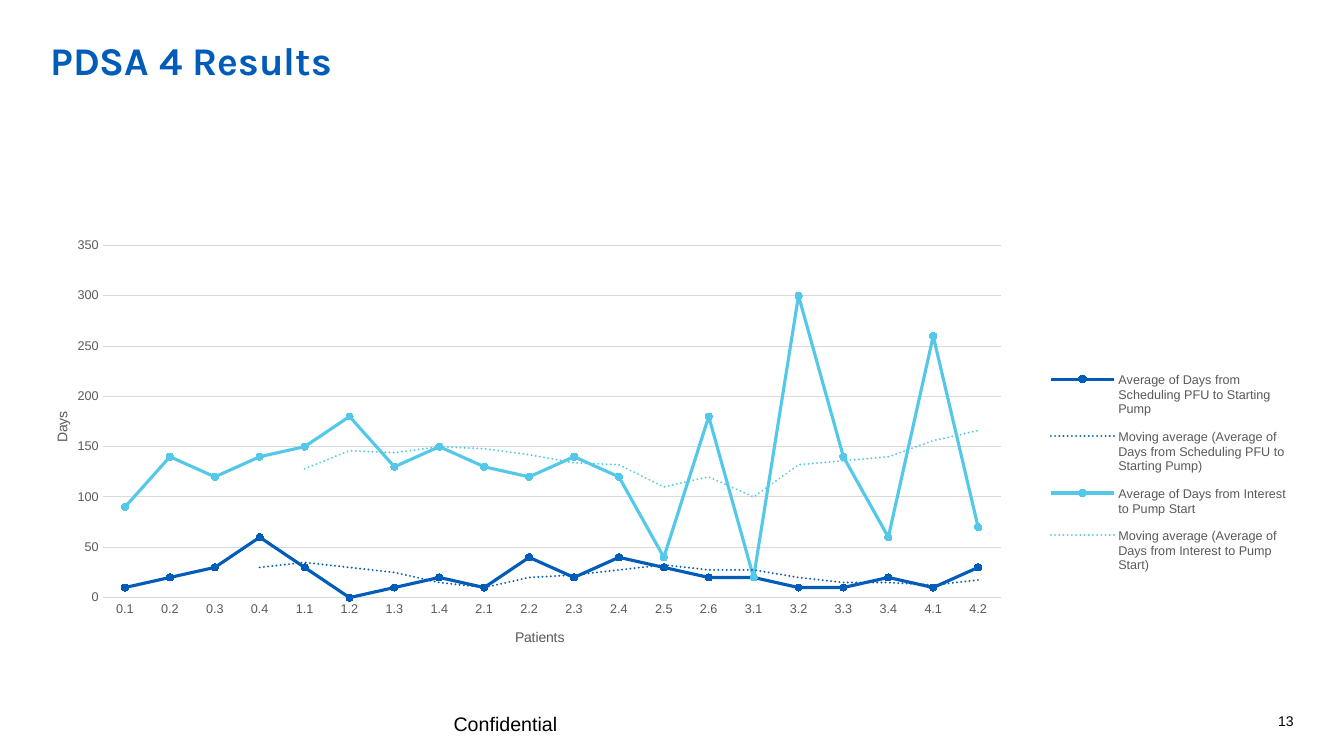
import pptx
import pptx.util
import pptx.dml.color
import pptx.chart.data
import pptx.enum.chart
import pptx.enum.text
import pptx.oxml
import pptx.oxml.ns

Inches, Pt = pptx.util.Inches, pptx.util.Pt
qn = pptx.oxml.ns.qn
NAVY, SKY, GREY, RULE = "005CB9", "54C8E8", "595959", "D9D9D9"
PATIENTS = ["0.1", "0.2", "0.3", "0.4", "1.1", "1.2", "1.3", "1.4", "2.1", "2.2",
            "2.3", "2.4", "2.5", "2.6", "3.1", "3.2", "3.3", "3.4", "4.1", "4.2"]
# Name, colour, moving-average period, days per patient
MEASURES = [
    ("Average of Days from Scheduling PFU to Starting Pump", NAVY, 4,
     [10, 20, 30, 60, 30, 0, 10, 20, 10, 40, 20, 40, 30, 20, 20, 10, 10, 20, 10, 30]),
    ("Average of Days from Interest to Pump Start", SKY, 5,
     [90, 140, 120, 140, 150, 180, 130, 150, 130, 120, 140, 120, 40, 180, 20, 300,
      140, 60, 260, 70]),
]


def style(font, size, color, name="Arial", bold=False):
    font.size, font.name, font.bold = Pt(size), name, bold
    font.color.rgb = pptx.dml.color.RGBColor.from_string(color)


def layout_xml(left, top, size="", inner=""):
    return pptx.oxml.parse_xml(
        '<c:layout xmlns:c="http://schemas.openxmlformats.org/drawingml/2006/chart">'
        f'<c:manualLayout>{inner}<c:xMode val="edge"/><c:yMode val="edge"/>'
        f'<c:x val="{left}"/><c:y val="{top}"/>{size}</c:manualLayout></c:layout>')


deck = pptx.Presentation()
deck.slide_width, deck.slide_height = Inches(13.33), Inches(7.5)
page = deck.slides.add_slide(deck.slide_layouts[5])

# Title, footer and page number
title = page.shapes.title
title.left, title.top, title.width, title.height = map(Inches, (0.5, 0.36, 8.12, 1.01))
footer = page.shapes.add_textbox(*map(Inches, (4.4, 7.01, 4.22, 0.23)))
number = page.shapes.add_textbox(*map(Inches, (12.34, 7.08, 0.49, 0.16)))
align, anchor = pptx.enum.text.PP_ALIGN, pptx.enum.text.MSO_ANCHOR
for box, words, size, color, name, side, hold in [
        (title, "PDSA 4 Results", 28, NAVY, "Karla", align.LEFT, anchor.TOP),
        (footer, "Confidential", 14, "000000", "Arial", align.LEFT, anchor.TOP),
        (number, "13", 10, "000000", "Arial", align.RIGHT, anchor.BOTTOM)]:
    frame = box.text_frame
    frame.word_wrap, frame.vertical_anchor = True, hold
    frame.auto_size = pptx.enum.text.MSO_AUTO_SIZE.NONE
    if box is not footer:
        frame.margin_left = frame.margin_right = frame.margin_top = frame.margin_bottom = 0
    para = frame.paragraphs[0]
    para.alignment = side
    span = para.add_run()
    span.text = words
    style(span.font, size, color, name, box is title)

# Line chart
data = pptx.chart.data.CategoryChartData()
data.categories = PATIENTS
for name, color, period, days in MEASURES:
    data.add_series(name, days)
chart = page.shapes.add_chart(pptx.enum.chart.XL_CHART_TYPE.LINE_MARKERS,
                              *map(Inches, (0.5, 2.06, 12.32, 4.58)), data).chart
chart.has_title = False
style(chart.font, 10, "000000")
plot = chart.plots[0]
plot.vary_by_categories = False
plot_area = chart._chartSpace.chart.plotArea
for old in plot_area.findall(qn("c:layout")):
    plot_area.remove(old)
plot_area.insert(0, layout_xml(0.042, 0.082, '<c:w val="0.723"/><c:h val="0.763"/>',
                               '<c:layoutTarget val="inner"/>'))

# Series with their moving averages
for line, (name, color, period, days) in zip(plot.series, MEASURES):
    fill = pptx.dml.color.RGBColor.from_string(color)
    line.smooth = False
    line.format.line.width = Pt(2.25)
    line.format.line.color.rgb = fill
    marker = line.marker
    marker.style, marker.size = pptx.enum.chart.XL_MARKER_STYLE.CIRCLE, 5
    marker.format.fill.solid()
    marker.format.fill.fore_color.rgb = fill
    marker.format.line.color.rgb = fill
    line._element.find(qn("c:cat")).addprevious(pptx.oxml.parse_xml(
        '<c:trendline xmlns:c="http://schemas.openxmlformats.org/drawingml/2006/chart" '
        'xmlns:a="http://schemas.openxmlformats.org/drawingml/2006/main">'
        f'<c:spPr><a:ln w="{Pt(1.5)}" cap="rnd"><a:solidFill><a:srgbClr val="{color}"/>'
        '</a:solidFill><a:prstDash val="sysDot"/></a:ln></c:spPr>'
        f'<c:trendlineType val="movingAvg"/><c:period val="{period}"/>'
        '<c:dispRSqr val="0"/><c:dispEq val="0"/></c:trendline>'))

# Axes
rule = pptx.dml.color.RGBColor.from_string(RULE)
days_axis, patient_axis = chart.value_axis, chart.category_axis
for axis, words, left, top in [(patient_axis, "Patients", 0.372, 0.906),
                               (days_axis, "Days", 0, 0.436)]:
    axis.major_tick_mark = axis.minor_tick_mark = pptx.enum.chart.XL_TICK_MARK.NONE
    style(axis.tick_labels.font, 9, GREY)
    span = axis.axis_title.text_frame.paragraphs[0].add_run()
    span.text = words
    style(span.font, 10, GREY)
    heading = axis.axis_title._element
    for old in heading.findall(qn("c:layout")):
        heading.remove(old)
    heading.find(qn("c:tx")).addnext(layout_xml(left, top))
days_axis.minimum_scale, days_axis.maximum_scale, days_axis.major_unit = 0, 350, 50
days_axis.format.line.fill.background()
for ruled in (days_axis.major_gridlines, patient_axis):
    ruled.format.line.width = Pt(0.75)
    ruled.format.line.color.rgb = rule

# Legend
chart.has_legend = True
legend = chart.legend
legend.position = pptx.enum.chart.XL_LEGEND_POSITION.RIGHT
legend.include_in_layout = False
style(legend.font, 9, GREY)
for old in legend._element.findall(qn("c:layout")):
    legend._element.remove(old)
legend._element.find(qn("c:legendPos")).addnext(
    layout_xml(0.8, 0.33, '<c:w val="0.2"/><c:h val="0.49"/>'))

deck.save("out.pptx")
